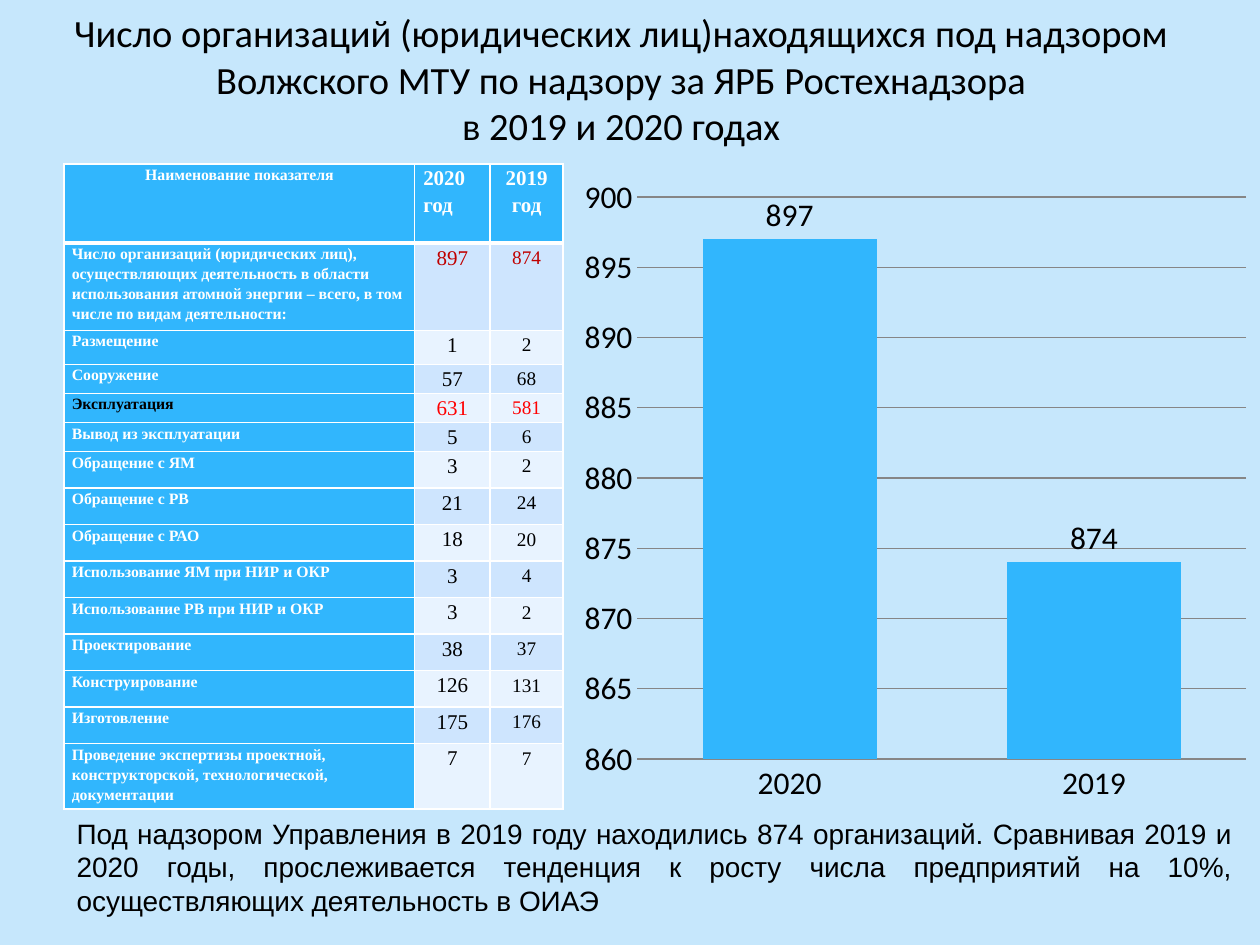
from lxml.etree import SubElement
from pptx import Presentation
from pptx.chart.data import CategoryChartData
from pptx.dml.color import RGBColor
from pptx.enum.chart import XL_CHART_TYPE, XL_LABEL_POSITION, XL_TICK_MARK
from pptx.enum.text import MSO_ANCHOR, PP_ALIGN
from pptx.oxml.ns import qn
from pptx.util import Inches, Pt

BLUE, BLACK, WHITE, GREY = "31B6FD", "000000", "FFFFFF", "868686"
DARK_RED, RED = "C00000", "FF0000"
BANDS = ("E8F3FF", "CEE5FE")
COLUMN_WIDTHS = (2.78, 0.6, 0.58)
ROW_HEIGHTS = (0.63, 0.69, 0.27, 0.21, 0.21, 0.22, *[0.29] * 8, 0.43)
INDICATORS = (
    ("Число организаций (юридических лиц), осуществляющих деятельность в области "
     "использования атомной энергии – всего, в том числе по видам деятельности:", 897, 874),
    ("Размещение", 1, 2),
    ("Сооружение", 57, 68),
    ("Эксплуатация", 631, 581),
    ("Вывод из эксплуатации", 5, 6),
    ("Обращение с ЯМ", 3, 2),
    ("Обращение с РВ", 21, 24),
    ("Обращение с РАО", 18, 20),
    ("Использование ЯМ при НИР и ОКР", 3, 4),
    ("Использование РВ при НИР и ОКР", 3, 2),
    ("Проектирование", 38, 37),
    ("Конструирование", 126, 131),
    ("Изготовление", 175, 176),
    ("Проведение экспертизы проектной, конструкторской, технологической, документации", 7, 7),
)
NAME_COLORS = {"Эксплуатация": BLACK}
VALUE_COLORS = {1: DARK_RED, 4: RED}


def color(value):
    """Turn a hex string into a colour."""
    return RGBColor.from_string(value)


def write(frame, text, font="Times New Roman", size=12, ink=BLACK, bold=False,
          align=PP_ALIGN.LEFT, spacing=None, before=0):
    """Write one paragraph per line of text, with space before the first."""
    for index, line in enumerate(text.split("\n")):
        para = frame.paragraphs[0] if index == 0 else frame.add_paragraph()
        para.alignment = align
        para.space_before = Pt(0 if index else before)
        if spacing:
            para.line_spacing = spacing
        para.text = line
        for span in para.runs:
            span.font.name = font
            span.font.size = Pt(size)
            span.font.bold = bold
            span.font.color.rgb = color(ink)


def add_text(page, left, top, width, height, text, anchor=MSO_ANCHOR.TOP, **style):
    """Add a wrapped text box."""
    frame = page.shapes.add_textbox(
        Inches(left), Inches(top), Inches(width), Inches(height)).text_frame
    frame.word_wrap = True
    frame.vertical_anchor = anchor
    write(frame, text, **style)


def add_borders(cell, **widths):
    """Draw white cell borders with the given widths in points."""
    properties = cell._tc.get_or_add_tcPr()
    for index, side in enumerate("LRTB"):
        line = SubElement(properties, qn(f"a:ln{side}"), w=str(Pt(widths.get(side, 1))))
        fill = SubElement(line, qn("a:solidFill"))
        SubElement(fill, qn("a:srgbClr"), val=WHITE)
        properties.insert(index, line)


def fill_cell(cell, text, fill, side_margin, top_margin=0, borders=None, **style):
    """Format one table cell and write its text."""
    cell.margin_left = cell.margin_right = Inches(side_margin)
    cell.margin_top, cell.margin_bottom = Inches(top_margin), 0
    cell.fill.solid()
    cell.fill.fore_color.rgb = color(fill)
    add_borders(cell, **(borders or {}))
    write(cell.text_frame, text, spacing=1.15, **style)


def add_indicator_table(page):
    """Add the table of organisations by kind of activity."""
    table = page.shapes.add_table(
        len(ROW_HEIGHTS), len(COLUMN_WIDTHS), Inches(0.51), Inches(1.3),
        Inches(sum(COLUMN_WIDTHS)), Inches(sum(ROW_HEIGHTS))).table
    for column, width in zip(table.columns, COLUMN_WIDTHS):
        column.width = Inches(width)
    for row, height in zip(table.rows, ROW_HEIGHTS):
        row.height = Inches(height)

    center = PP_ALIGN.CENTER
    headers = (
        ("Наименование показателя", 0.06, 9, center, 2.9),
        ("2020\nгод", 0.07, 12, PP_ALIGN.LEFT, 15.9),
        ("2019\nгод", 0.06, 12, center, 14.5),
    )
    for column, (text, margin, size, align, before) in enumerate(headers):
        fill_cell(table.cell(0, column), text, BLUE, margin, borders={"B": 3},
                  size=size, ink=WHITE, bold=True, align=align, before=before)

    for row, (name, current, previous) in enumerate(INDICATORS, 1):
        borders = {"T": 3} if row == 1 else {}
        fill_cell(table.cell(row, 0), name, BLUE, 0.06, borders=borders, size=9,
                  ink=NAME_COLORS.get(name, WHITE), bold=True, before=2.9)
        values = ((current, 0.07, 0, 12), (previous, 0.01, 0.01, 11))
        for column, (value, side, top, size) in enumerate(values, 1):
            fill_cell(table.cell(row, column), str(value), BANDS[row % 2], side, top,
                      borders=borders, size=size, ink=VALUE_COLORS.get(row, BLACK),
                      align=center, before=3.4)


def add_total_chart(page):
    """Add the column chart of the yearly totals."""
    data = CategoryChartData()
    data.categories = ["2020", "2019"]
    data.add_series("Series 1", INDICATORS[0][1:])
    chart = page.shapes.add_chart(
        XL_CHART_TYPE.COLUMN_CLUSTERED, Inches(4.53), Inches(1.31),
        Inches(5.47), Inches(5.16), data).chart
    chart.has_legend = chart.has_title = False
    chart.font.name, chart.font.size = "Calibri", Pt(18)
    chart.font.color.rgb = color(BLACK)

    plot = chart.plots[0]
    plot.gap_width, plot.overlap, plot.vary_by_categories = 75, -25, False
    plot.has_data_labels = True
    plot.data_labels.show_value = True
    plot.data_labels.position = XL_LABEL_POSITION.OUTSIDE_END
    bars = plot.series[0].format.fill
    bars.solid()
    bars.fore_color.rgb = color(BLUE)

    values, years = chart.value_axis, chart.category_axis
    values.minimum_scale, values.maximum_scale, values.major_unit = 860, 900, 5
    values.major_tick_mark = years.major_tick_mark = XL_TICK_MARK.NONE
    values.format.line.fill.background()
    for line in (values.major_gridlines.format.line, years.format.line):
        line.color.rgb = color(GREY)
        line.width = Pt(0.75)


def main():
    """Build and save the slide."""
    deck = Presentation()
    deck.slide_width, deck.slide_height = Inches(10), Inches(7.5)
    page = deck.slides.add_slide(deck.slide_layouts[6])
    page.background.fill.solid()
    page.background.fill.fore_color.rgb = color("C6E7FC")
    add_text(page, 0.43, 0, 9, 1.25,
             "Число организаций (юридических лиц)находящихся под надзором "
             "Волжского МТУ по надзору за ЯРБ Ростехнадзора\vв 2019 и 2020 годах",
             anchor=MSO_ANCHOR.MIDDLE, font="Calibri", size=22, align=PP_ALIGN.CENTER)
    add_indicator_table(page)
    add_text(page, 0.51, 6.43, 9.37, 0.91,
             "Под надзором Управления в 2019 году находились 874 организаций. "
             "Сравнивая 2019 и 2020 годы, прослеживается тенденция к росту числа "
             "предприятий на 10%, осуществляющих деятельность в ОИАЭ",
             font="Arial", size=16, align=PP_ALIGN.JUSTIFY)
    add_total_chart(page)
    deck.save("out.pptx")


if __name__ == "__main__":
    main()
